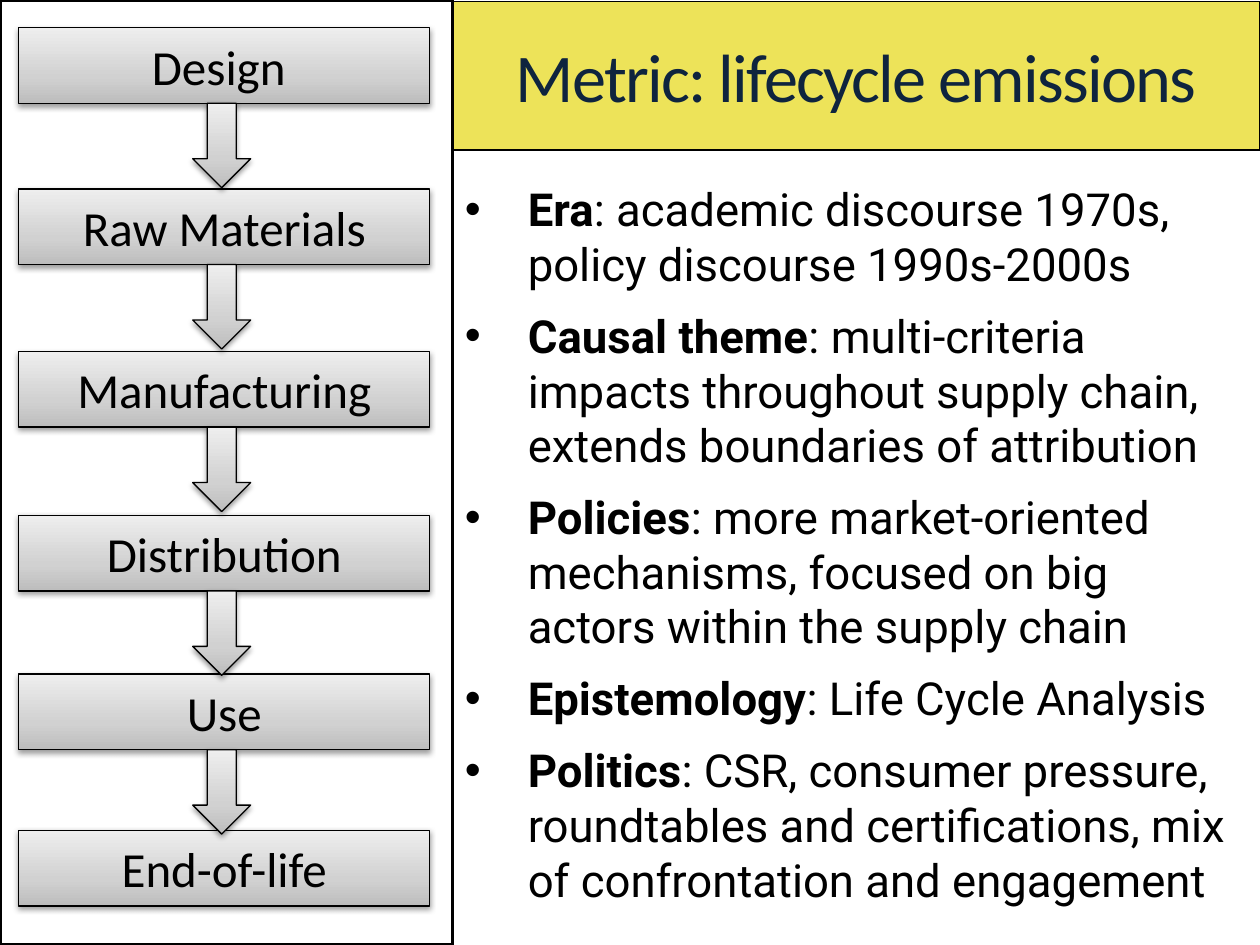
from lxml import etree
from pptx import Presentation
from pptx import util as u
from pptx.dml.color import RGBColor
from pptx.enum import shapes, text
from pptx.oxml import parse_xml
from pptx.oxml.ns import nsdecls, qn

COLORS = {"ink": "000000", "paper": "FFFFFF", "banner": "E7DA20", "title": "0F243E"}
GRADIENT = [(0, "BDBDBD"), (35, "D1D1D1"), (100, "EEEEEE")]
WIDTH, HEIGHT = 10, 7.5
PANEL_WIDTH = 3.59
STAGE_HEIGHT = 0.6
STAGES = [("Design ", 0.22), ("Raw Materials", 1.5), ("Manufacturing", 2.79),
          ("Distribution", 4.09), ("Use", 5.35), ("End-of-life", 6.59)]
POINTS = [
    ("Era", ": academic discourse 1970s, policy discourse 1990s-2000s"),
    ("Causal theme", ": multi-criteria impacts throughout supply chain, "
                     "extends boundaries of attribution"),
    ("Policies", ": more market-oriented mechanisms, focused on big actors "
                 "within the supply chain"),
    ("Epistemology", ": Life Cycle Analysis"),
    ("Politics", ": CSR, consumer pressure, roundtables and certifications, "
                 "mix of confrontation and engagement"),
]


def color(name):
    return RGBColor.from_string(COLORS[name])


def apply(target, values):
    for name, value in values.items():
        setattr(target, name, value)


class SlideBuilder:
    """Holds the text styles and the current slide; lengths are shares of its size."""

    styles = {
        "title": {"name": "Calibri", "size": u.Pt(39), "bold": False},
        "stage": {"name": "Calibri", "size": u.Pt(28)},
        "label": {"name": "Roboto", "size": u.Pt(26), "bold": True},
        "body": {"name": "Roboto", "size": u.Pt(26), "bold": False},
    }

    def __init__(self, deck):
        self.deck = deck
        self.page = deck.slides.add_slide(deck.slide_layouts[5])

    def place(self, left, top, width, height):
        across, down = self.deck.slide_width, self.deck.slide_height
        return [round(share * side) for share, side in
                zip((left, top, width, height), (across, down, across, down))]

    def add_span(self, para, words, style, ink="ink"):
        span = para.add_run()
        span.text = words
        apply(span.font, self.styles[style])
        span.font.color.rgb = color(ink)
        return span

    def outline(self, shape, points):
        shape.line.color.rgb = color("ink")
        shape.line.width = u.Pt(points)

    def panel(self, *area):
        box = self.page.shapes.add_shape(shapes.MSO_SHAPE.RECTANGLE, *self.place(*area))
        box.shadow.inherit = False
        box.fill.solid()
        box.fill.fore_color.rgb = color("paper")
        self.outline(box, 2)

    def title(self, words, *area):
        box = self.page.shapes.title
        apply(box, dict(zip(("left", "top", "width", "height"), self.place(*area))))
        box.fill.solid()
        box.fill.fore_color.rgb = color("banner")
        tint = box._element.spPr.find(".//" + qn("a:srgbClr"))
        etree.SubElement(tint, qn("a:alpha"), val="74000")
        self.outline(box, 0.75)
        apply(box.text_frame, {"vertical_anchor": text.MSO_ANCHOR.MIDDLE,
                               "auto_size": text.MSO_AUTO_SIZE.NONE, "word_wrap": True})
        para = box.text_frame.paragraphs[0]
        para.alignment = text.PP_ALIGN.CENTER
        span = self.add_span(para, words, "title", "title")
        span._r.get_or_add_rPr().set("spc", "-100")

    def raised(self, group, kind, *area):
        """Add a grey gradient shape with a soft shadow below it."""
        shape = group.shapes.add_shape(kind, *self.place(*area))
        shape.fill.gradient()
        shape.fill.gradient_angle = 90
        properties = shape._element.spPr
        stops = properties.find(".//" + qn("a:gsLst"))
        for stop in list(stops):
            stops.remove(stop)
        for position, shade in GRADIENT:
            stop = etree.SubElement(stops, qn("a:gs"), pos=str(position * 1000))
            etree.SubElement(stop, qn("a:srgbClr"), val=shade)
        self.outline(shape, 0.75)
        properties.append(parse_xml(
            f'<a:effectLst {nsdecls("a")}><a:outerShdw blurRad="{u.Pt(3.1)}" '
            f'dist="{u.Pt(1.6)}" dir="5400000" rotWithShape="0"><a:srgbClr val="{COLORS["ink"]}">'
            '<a:alpha val="38000"/></a:srgbClr></a:outerShdw></a:effectLst>'))
        return shape

    def stage(self, group, words, *area):
        box = self.raised(group, shapes.MSO_SHAPE.RECTANGLE, *area)
        box.text_frame.vertical_anchor = text.MSO_ANCHOR.MIDDLE
        para = box.text_frame.paragraphs[0]
        para.alignment = text.PP_ALIGN.CENTER
        self.add_span(para, words, "stage")

    def flow(self, stages):
        group = self.page.shapes.add_group_shape()
        for words, top in stages:
            self.stage(group, words, 0.15 / WIDTH, top / HEIGHT,
                       3.26 / WIDTH, STAGE_HEIGHT / HEIGHT)
        for _, top in stages[:-1]:
            self.raised(group, shapes.MSO_SHAPE.DOWN_ARROW, 1.53 / WIDTH,
                        (top + STAGE_HEIGHT) / HEIGHT, 0.46 / WIDTH, 0.67 / HEIGHT)

    def bullets(self, points, *area):
        frame = self.page.shapes.add_textbox(*self.place(*area)).text_frame
        frame.word_wrap = True
        for index, (label, words) in enumerate(points):
            para = frame.add_paragraph() if index else frame.paragraphs[0]
            para.space_after = u.Pt(10)
            indent = para._p.get_or_add_pPr()
            indent.set("marL", str(u.Inches(0.5)))
            indent.set("indent", str(u.Inches(-0.5)))
            etree.SubElement(indent, qn("a:buFont"), typeface="Arial")
            etree.SubElement(indent, qn("a:buChar"), char="•")
            self.add_span(para, label, "label")
            self.add_span(para, words, "body")


def main():
    deck = Presentation()
    deck.slide_width, deck.slide_height = u.Inches(WIDTH), u.Inches(HEIGHT)
    builder = SlideBuilder(deck)
    split = PANEL_WIDTH / WIDTH
    builder.panel(0, 0, split, 1)
    builder.flow(STAGES)
    builder.title("Metric: lifecycle emissions", split, 0.01 / HEIGHT, 1 - split, 1.18 / HEIGHT)
    builder.bullets(POINTS, split, 1.39 / HEIGHT, 1 - split, 6.1 / HEIGHT)
    deck.save("out.pptx")


if __name__ == "__main__":
    main()
